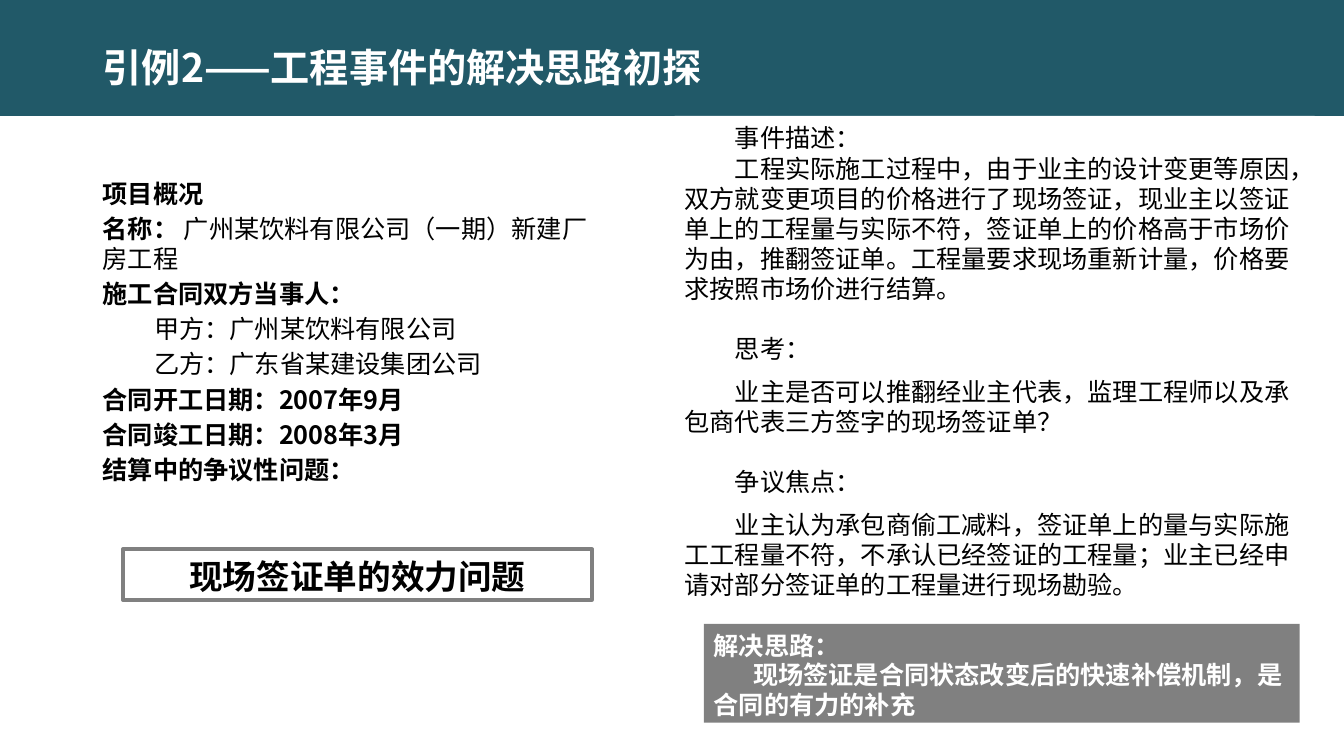
import pptx
import pptx.util
import pptx.dml.color
import pptx.enum.shapes
import pptx.enum.text
from dataclasses import dataclass
from pptx.util import Inches, Pt


@dataclass(frozen=True)
class Theme:
    font: str = "Noto Sans CJK SC"
    teal: str = "215968"
    gray: str = "808080"
    white: str = "FFFFFF"
    black: str = "000000"
    title: int = 28
    focus: int = 24
    body: int = 18


THEME = Theme()
PITCH = 1.194  # line height per point of type
DENSE = 21 / 18  # tighter line height of the answer box


@dataclass
class Para:
    text: str
    bold: bool = False
    label: str = ""  # bold lead-in before the text
    indent: float = 0
    before: float = 0


def rgb(color):
    return pptx.dml.color.RGBColor.from_string(color)


def add_box(slide, left, top, width, height, fill=None, line=None):
    box = slide.shapes.add_shape(
        pptx.enum.shapes.MSO_SHAPE.RECTANGLE,
        Inches(left), Inches(top), Inches(width), Inches(height))
    box.shadow.inherit = False
    if fill:
        box.fill.solid()
        box.fill.fore_color.rgb = rgb(fill)
    else:
        box.fill.background()
    if line:
        box.line.color.rgb = rgb(line)
        box.line.width = Pt(3)
    else:
        box.line.fill.background()
    return box


def add_label(slide, left, top, width, height):
    return slide.shapes.add_textbox(
        Inches(left), Inches(top), Inches(width), Inches(height))


def style_run(run, size, color, bold):
    font = run.font
    font.name = THEME.font
    font.size = Pt(size)
    font.bold = bold
    font.color.rgb = rgb(color)
    east = pptx.oxml.parse_xml(
        '<a:ea xmlns:a="http://schemas.openxmlformats.org/drawingml/2006/main"'
        f' typeface="{THEME.font}"/>')
    run.font._element.find(pptx.oxml.ns.qn("a:latin")).addnext(east)


def write(shape, paras, size=THEME.body, color=THEME.black, pitch=PITCH,
          align=pptx.enum.text.PP_ALIGN.LEFT,
          anchor=pptx.enum.text.MSO_ANCHOR.TOP, wrap=True):
    frame = shape.text_frame
    frame.word_wrap = wrap
    frame.vertical_anchor = anchor
    frame.margin_top, frame.margin_bottom = Inches(0.07), Inches(0.03)
    frame.text = "\n".join(item.label + item.text for item in paras)
    for para, item in zip(frame.paragraphs, paras):
        para.alignment = align
        para.line_spacing = Pt(round(size * pitch, 1))
        para.space_before = Pt(item.before)
        if item.indent:
            props = para._p.get_or_add_pPr()
            props.set("marL", "0")
            props.set("indent", str(Inches(item.indent)))
        if item.label:
            para.runs[0].text = item.label
            style_run(para.runs[0], size, color, True)
            para.add_run().text = item.text
        style_run(para.runs[-1], size, color, item.bold)


def add_facts(slide):
    gap = 0.2 * THEME.body
    facts = [
        Para("项目概况", True),
        Para(" 广州某饮料有限公司（一期）新建厂房工程", label="名称：", before=gap),
        Para("施工合同双方当事人：", True, before=gap),
        Para("甲方：广州某饮料有限公司", indent=0.51, before=gap),
        Para("乙方：广东省某建设集团公司", indent=0.51, before=gap),
        Para("合同开工日期：2007年9月", True, before=gap),
        Para("合同竣工日期：2008年3月", True, before=gap),
        Para("结算中的争议性问题：", True, before=gap),
    ]
    write(add_label(slide, 0.92, 1.7, 5.2, 3.63), facts)


def add_story(slide):
    parts = [
        ("事件描述：",
         "工程实际施工过程中，由于业主的设计变更等原因，双方就变更项目的价格进行了现场签证，"
         "现业主以签证单上的工程量与实际不符，签证单上的价格高于市场价为由，推翻签证单。"
         "工程量要求现场重新计量，价格要求按照市场价进行结算。"),
        ("思考：",
         "业主是否可以推翻经业主代表，监理工程师以及承包商代表三方签字的现场签证单？"),
        ("争议焦点：",
         "业主认为承包商偷工减料，签证单上的量与实际施工工程量不符，不承认已经签证的工程量；"
         "业主已经申请对部分签证单的工程量进行现场勘验。"),
    ]
    paras = []
    for index, (head, text) in enumerate(parts):
        first = index == 0
        paras.append(Para(head, indent=0.5,
                          before=0 if first else THEME.body * PITCH))
        paras.append(Para(text, indent=0.5,
                          before=0 if first else THEME.body / 2))
    write(add_box(slide, 6.69, 1.15, 6.35, 6.14, THEME.white), paras)


def main():
    deck = pptx.Presentation()
    deck.slide_width, deck.slide_height = Inches(13.33), Inches(7.5)
    slide = deck.slides.add_slide(deck.slide_layouts[6])

    # Title band
    add_box(slide, -0.01, -0.03, 13.34, 1.18, THEME.teal)
    write(add_label(slide, 0.92, 0.36, 6.38, 0.57),
          [Para("引例2——工程事件的解决思路初探", True)],
          THEME.title, THEME.white, wrap=False)

    # Project facts on the left, event on the right
    add_facts(slide)
    add_story(slide)

    # Answer box
    write(add_box(slide, 6.98, 6.19, 5.91, 0.98, THEME.gray),
          [Para("解决思路：", True),
           Para("现场签证是合同状态改变后的快速补偿机制，是合同的有力的补充",
                True, indent=0.39)],
          color=THEME.white, pitch=DENSE)

    # Framed key issue
    write(add_box(slide, 1.22, 5.45, 4.65, 0.5, line=THEME.gray),
          [Para("现场签证单的效力问题", True)], THEME.focus,
          align=pptx.enum.text.PP_ALIGN.CENTER,
          anchor=pptx.enum.text.MSO_ANCHOR.MIDDLE)

    deck.save("out.pptx")


if __name__ == "__main__":
    main()
